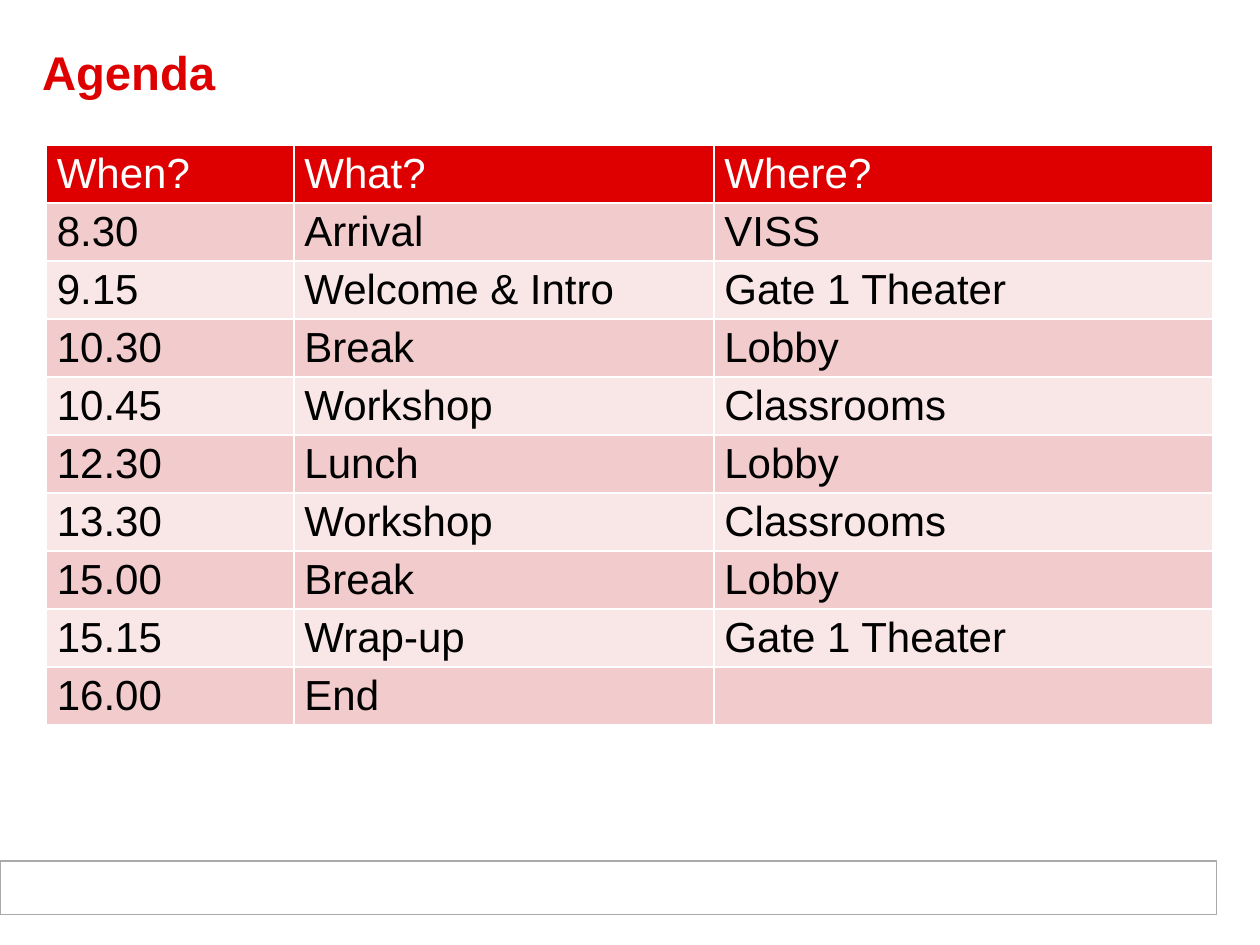
from lxml import etree
from pptx import Presentation
from pptx.dml.color import RGBColor
from pptx.enum.shapes import MSO_SHAPE
from pptx.enum.text import MSO_ANCHOR, PP_ALIGN
from pptx.oxml.ns import qn
from pptx.util import Pt

RECT = MSO_SHAPE.RECTANGLE
MIDDLE = MSO_ANCHOR.MIDDLE
LEFT = PP_ALIGN.LEFT
TITLE_ONLY = 5

HUES = {
    "red": "DE0000",
    "rose": "F2CCCC",
    "blush": "F9E7E7",
    "white": "FFFFFF",
    "black": "000000",
    "grey": "AAAAAA",
}

AGENDA = [
    ("When?", "What?", "Where?"),
    ("8.30", "Arrival", "VISS"),
    ("9.15", "Welcome & Intro", "Gate 1 Theater"),
    ("10.30", "Break", "Lobby"),
    ("10.45", "Workshop", "Classrooms"),
    ("12.30", "Lunch", "Lobby"),
    ("13.30", "Workshop", "Classrooms"),
    ("15.00", "Break", "Lobby"),
    ("15.15", "Wrap-up", "Gate 1 Theater"),
    ("16.00", "End", ""),
]


class Deck:
    font = "Arial"
    side = Pt(6)
    edge = Pt(3.2)

    def __init__(self, wide, high):
        self.file = Presentation()
        self.file.slide_width, self.file.slide_height = Pt(wide), Pt(high)
        self.slide = self.file.slides.add_slide(self.file.slide_layouts[TITLE_ONLY])

    def hue(self, name):
        return RGBColor.from_string(HUES[name])

    def inset(self, item):
        item.margin_left = item.margin_right = self.side
        item.margin_top = item.margin_bottom = self.edge

    def style(self, para, size, hue, bold=False):
        para.alignment = LEFT
        para.font.name = self.font
        para.font.size = Pt(size)
        para.font.bold = bold
        para.font.color.rgb = self.hue(hue)

    def title(self, text, left, top, wide, high):
        shape = self.slide.shapes.title
        shape.left, shape.top = Pt(left), Pt(top)
        shape.width, shape.height = Pt(wide), Pt(high)
        frame = shape.text_frame
        frame.text = text
        frame.vertical_anchor = MIDDLE
        self.inset(frame)
        para = frame.paragraphs[0]
        para.line_spacing = 0.85
        self.style(para, 27, "red", True)

    def box(self, left, top, wide, high):
        shape = self.slide.shapes.add_shape(RECT, Pt(left), Pt(top), Pt(wide), Pt(high))
        shape.shadow.inherit = False
        shape.fill.solid()
        shape.fill.fore_color.rgb = self.hue("white")
        shape.line.color.rgb = self.hue("grey")
        shape.line.width = Pt(0.75)

    def border(self, cell):
        props = cell._tc.get_or_add_tcPr()
        for tag in ("a:lnL", "a:lnR", "a:lnT", "a:lnB"):
            line = etree.SubElement(props, qn(tag), w=str(Pt(1)))
            fill = etree.SubElement(line, qn("a:solidFill"))
            etree.SubElement(fill, qn("a:srgbClr"), val=HUES["white"])

    def cell(self, cell, text, fill, hue):
        self.inset(cell)
        self.border(cell)
        cell.fill.solid()
        cell.fill.fore_color.rgb = self.hue(fill)
        cell.text = text
        self.style(cell.text_frame.paragraphs[0], 24, hue)

    def table(self, rows, left, top, cols, high):
        table = self.slide.shapes.add_table(
            len(rows), len(cols), Pt(left), Pt(top), Pt(sum(cols)), Pt(high * len(rows))
        ).table
        for col, wide in zip(table.columns, cols):
            col.width = Pt(wide)
        for i, row in enumerate(rows):
            table.rows[i].height = Pt(high)
            fill = "red" if i == 0 else "rose" if i % 2 else "blush"
            for j, text in enumerate(row):
                self.cell(table.cell(i, j), text, fill, "black" if i else "white")


def main():
    deck = Deck(720, 540)
    deck.box(0, 492, 695, 30.5)
    deck.title("Agenda", 18, 11.5, 666, 64)
    deck.table(AGENDA, 26.5, 83, (141.5, 240, 285), 29.5)
    deck.file.save("out.pptx")


if __name__ == "__main__":
    main()
